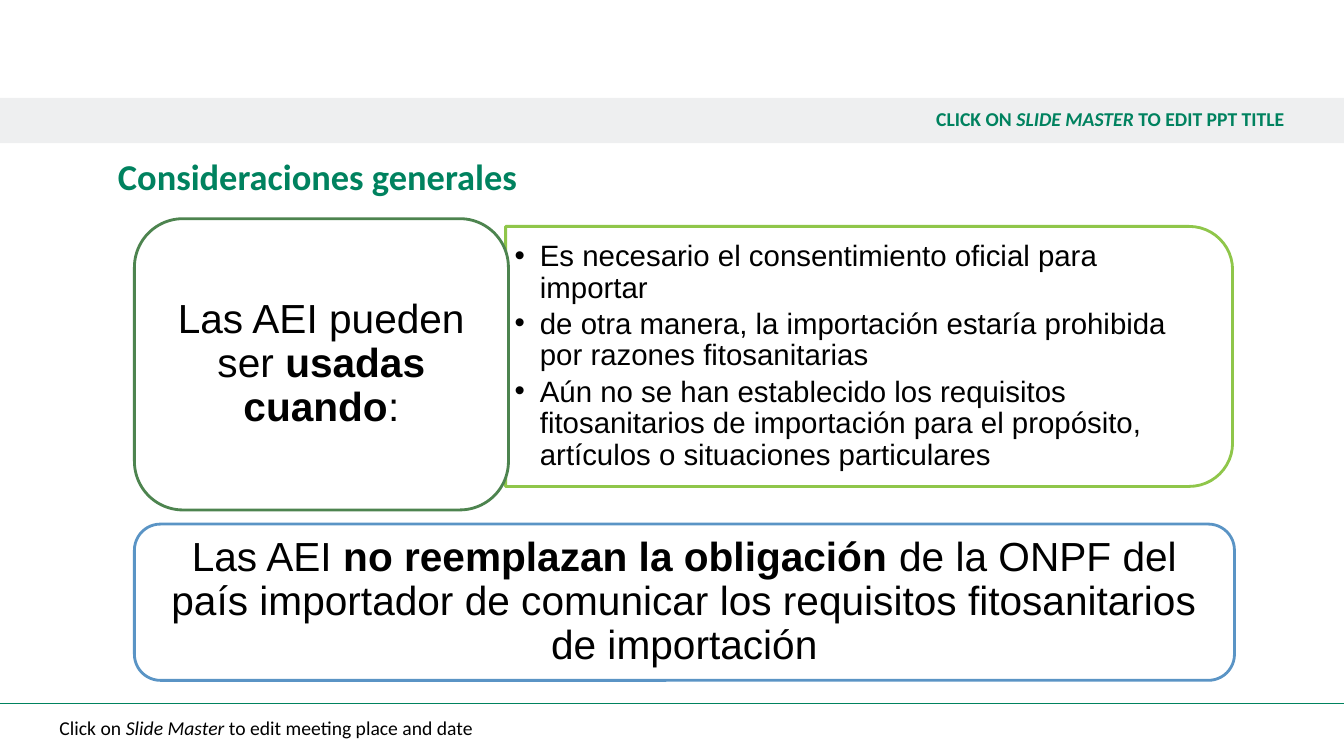
from dataclasses import dataclass

from lxml import etree
from pptx import Presentation
from pptx.dml.color import RGBColor
from pptx.enum.shapes import MSO_CONNECTOR, MSO_SHAPE
from pptx.enum.text import MSO_ANCHOR, MSO_AUTO_SIZE, PP_ALIGN
from pptx.oxml.ns import qn
from pptx.util import Inches, Pt

LEFT, CENTER, RIGHT = PP_ALIGN.LEFT, PP_ALIGN.CENTER, PP_ALIGN.RIGHT
TOP, MIDDLE = MSO_ANCHOR.TOP, MSO_ANCHOR.MIDDLE
RECT, ROUNDED = MSO_SHAPE.RECTANGLE, MSO_SHAPE.ROUNDED_RECTANGLE
TWO_ROUNDED = MSO_SHAPE.ROUND_2_SAME_RECTANGLE
SLIDE_WIDTH, SLIDE_HEIGHT = Inches(13.33), Inches(7.5)


@dataclass(frozen=True)
class Theme:
    brand: str = "00825F"
    ink: str = "000000"
    paper: str = "FFFFFF"
    band: str = "D8D9DC"
    forest: str = "4D844F"
    lime: str = "8FC64A"
    blue: str = "5A94C5"
    heading_font: str = "Calibri"
    body_font: str = "Arial"
    title_size: int = 26
    statement_size: int = 29
    list_size: int = 21
    margin_size: int = 14
    outline: int = 2


THEME = Theme()


@dataclass(frozen=True)
class Box:
    """An area in percent of the slide's width and height."""
    x: float
    y: float
    w: float
    h: float

    def emu(self):
        return (int(SLIDE_WIDTH * self.x / 100), int(SLIDE_HEIGHT * self.y / 100),
                int(SLIDE_WIDTH * self.w / 100), int(SLIDE_HEIGHT * self.h / 100))


def color(value):
    return RGBColor.from_string(value)


def place(shape, box):
    shape.left, shape.top, shape.width, shape.height = box.emu()


def set_frame(frame, insets, anchor=MIDDLE):
    frame.word_wrap = True
    frame.auto_size = MSO_AUTO_SIZE.NONE
    frame.vertical_anchor = anchor
    (frame.margin_left, frame.margin_top,
     frame.margin_right, frame.margin_bottom) = map(Inches, insets)


def write(para, spans, size, font, ink=THEME.ink, align=LEFT):
    """Each span is a text and its style: '', 'b', 'i' or 'bi'."""
    para.alignment = align
    para.line_spacing = 0.9
    para.space_before = Pt(0)
    for text, style in spans:
        span = para.add_run()
        span.text = text
        span.font.size = Pt(size)
        span.font.name = font
        span.font.bold = "b" in style
        span.font.italic = "i" in style
        span.font.color.rgb = color(ink)


def add_panel(page, kind, box, fill, line=None):
    panel = page.shapes.add_shape(kind, *box.emu())
    panel.shadow.inherit = False
    panel.fill.solid()
    panel.fill.fore_color.rgb = color(fill)
    if line:
        panel.line.color.rgb = color(line)
        panel.line.width = Pt(THEME.outline)
    else:
        panel.line.fill.background()
    return panel


def header_band(page, box, spans):
    band = add_panel(page, RECT, box, THEME.band)
    tint = band.fill._xPr.find(qn("a:solidFill"))[0]
    etree.SubElement(tint, qn("a:alpha")).set("val", "42000")
    set_frame(band.text_frame, (0.59, 0.05, 0.59, 0.05))
    write(band.text_frame.paragraphs[0], spans, THEME.margin_size,
          THEME.heading_font, THEME.brand, RIGHT)


def footer(page, box, spans):
    # Rule across the slide, a little above the text
    x, y, width, height = box.emu()
    rule_y = y - height // 4
    rule = page.shapes.add_connector(MSO_CONNECTOR.STRAIGHT, x, rule_y, x + width, rule_y)
    rule.line.color.rgb = color(THEME.brand)
    rule.line.width = Pt(1)
    etree.SubElement(rule._element.spPr, qn("a:effectLst"))
    # Meeting place and date
    note = page.shapes.add_textbox(x, y, width, height)
    set_frame(note.text_frame, (0.59, 0.05, 0.59, 0.05))
    write(note.text_frame.paragraphs[0], spans, THEME.margin_size, THEME.heading_font)


def slide_title(page, box, text):
    title = page.shapes.title
    place(title, box)
    set_frame(title.text_frame, (0.59, 0, 0.39, 0.05), TOP)
    write(title.text_frame.paragraphs[0], [(text, "b")], THEME.title_size,
          THEME.heading_font, THEME.brand)


def statement(page, box, line, spans):
    panel = add_panel(page, ROUNDED, box, THEME.paper, line)
    set_frame(panel.text_frame, (0.12, 0.06, 0.12, 0.06))
    write(panel.text_frame.paragraphs[0], spans, THEME.statement_size,
          THEME.body_font, align=CENTER)


def condition_list(page, box, items):
    # Outline: a quarter turn puts the rounded corners on the right
    panel = add_panel(page, TWO_ROUNDED, box, THEME.paper, THEME.lime)
    x, y, width, height = box.emu()
    panel.left, panel.top = x + (width - height) // 2, y + (height - width) // 2
    panel.width, panel.height = height, width
    panel.rotation = 90
    # Bulleted text, brought in front of the outline
    body = page.placeholders[1]
    place(body, box)
    page.shapes._spTree.append(body._element)
    frame = body.text_frame
    set_frame(frame, (0.09, 0.16, 0.22, 0.16))
    for index, item in enumerate(items):
        para = frame.add_paragraph() if index else frame.paragraphs[0]
        props = para._p.get_or_add_pPr()
        props.set("marL", str(Inches(0.25)))
        props.set("indent", str(-Inches(0.25)))
        etree.SubElement(props, qn("a:buChar")).set("char", "•")
        write(para, [(item, "")], THEME.list_size, THEME.body_font)
        para.space_after = Pt(THEME.list_size * 0.15)


def main():
    deck = Presentation()
    deck.slide_width, deck.slide_height = SLIDE_WIDTH, SLIDE_HEIGHT
    page = deck.slides.add_slide(deck.slide_layouts[1])

    # Margins of the page
    footer(page, Box(0, 94.2, 100, 4.6), [
        ("Click on ", ""), ("Slide Master ", "i"),
        ("to edit meeting place and date", "")])
    header_band(page, Box(0, 12.95, 100, 6), [
        ("CLICK ON ", "b"), ("SLIDE MASTER ", "bi"), ("TO EDIT PPT TITLE", "b")])
    slide_title(page, Box(4.35, 21.07, 86.27, 5.6), "Consideraciones generales")

    # Content
    statement(page, Box(10, 69.33, 81.85, 20.67), THEME.blue, [
        ("Las AEI ", ""), ("no reemplazan la obligación ", "b"),
        ("de la ONPF del país importador de comunicar los requisitos "
         "fitosanitarios de importación", "")])
    condition_list(page, Box(37.62, 29.95, 54.09, 34.4), [
        "Es necesario el consentimiento oficial para importar",
        "de otra manera, la importación estaría prohibida por razones fitosanitarias",
        "Aún no se han establecido los requisitos fitosanitarios de importación "
        "para el propósito, artículos o situaciones particulares"])
    statement(page, Box(10, 28.93, 27.83, 38.53), THEME.forest, [
        ("Las AEI pueden ser ", ""), ("usadas cuando", "b"), (":", "")])

    deck.save("out.pptx")


if __name__ == "__main__":
    main()
